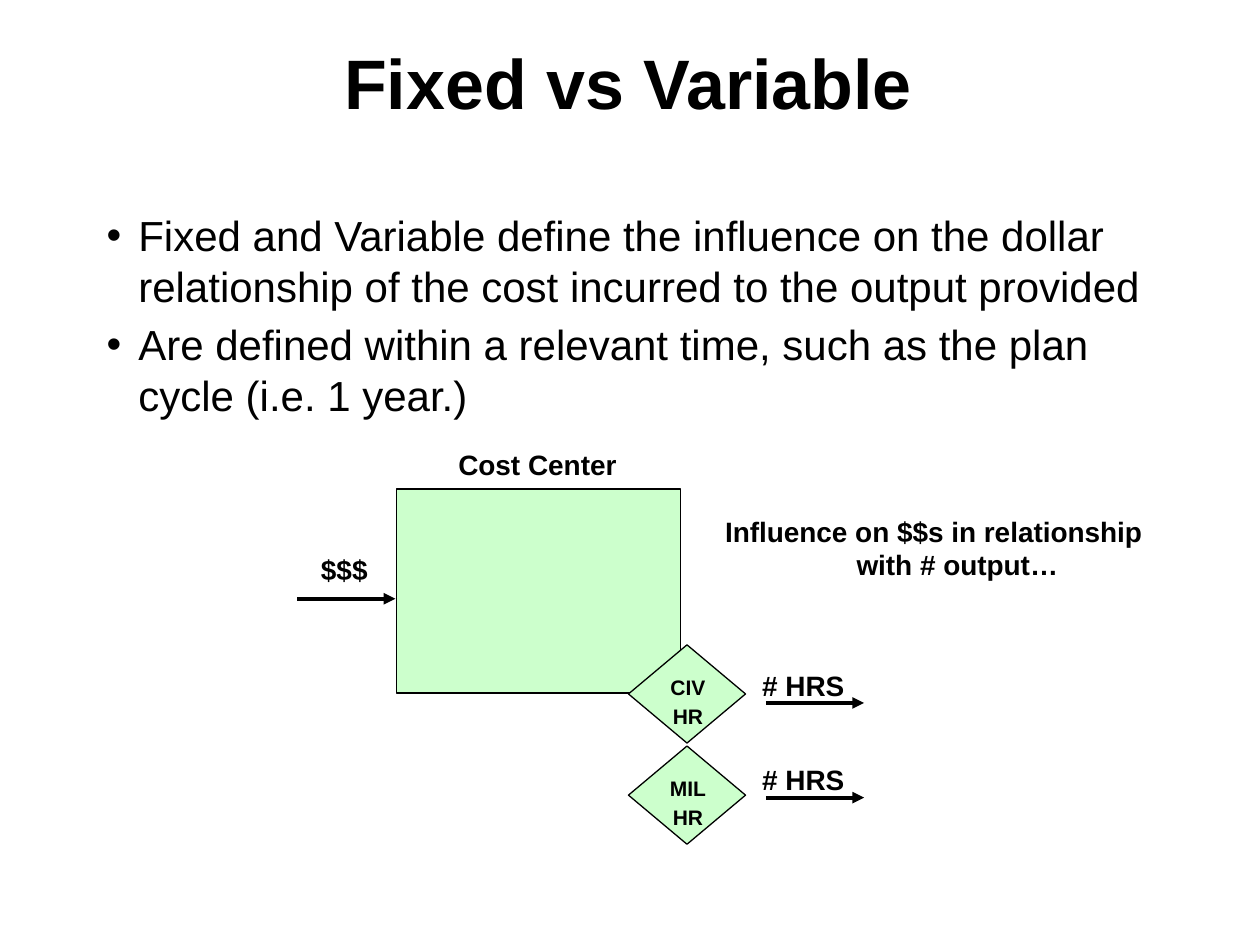
import pptx
import pptx.util
import pptx.dml.color
import pptx.enum.shapes
import pptx.enum.text
import pptx.oxml.ns
import lxml.etree

Cm = pptx.util.Cm
Pt = pptx.util.Pt
ALIGN = pptx.enum.text.PP_ALIGN
SHAPES = pptx.enum.shapes.MSO_SHAPE
COLORS = {"ink": "000000", "fill": "CCFFCC"}
LABEL = {"bold": True, "align": ALIGN.CENTER, "left": 0.95, "hanging": 0.95, "after": 2}


def color(name):
    return pptx.dml.color.RGBColor.from_string(COLORS[name])


def add_xml(parent, tag, **attributes):
    return lxml.etree.SubElement(parent, pptx.oxml.ns.qn(tag), **attributes)


def write_text(shape, text, size=16, bold=False, align=ALIGN.LEFT, left=0, hanging=0,
               bullet=None, before=0, after=0, insets=(0.25, 0.13), wrap=True):
    frame = shape.text_frame
    frame.word_wrap = wrap
    frame.auto_size = pptx.enum.text.MSO_AUTO_SIZE.NONE
    frame.vertical_anchor = pptx.enum.text.MSO_ANCHOR.TOP
    frame.margin_left = frame.margin_right = Cm(insets[0])
    frame.margin_top = Cm(insets[1])
    frame.margin_bottom = 0
    frame.text = text
    for index, paragraph in enumerate(frame.paragraphs):
        properties = paragraph._p.get_or_add_pPr()
        properties.set("marL", str(Cm(left)))
        properties.set("indent", str(-Cm(hanging)))
        if bullet:
            add_xml(properties, "a:buFont", typeface="Arial")
            add_xml(properties, "a:buChar", char=bullet)
        paragraph.alignment = align
        paragraph.space_before = Pt(before if index else 0)
        paragraph.space_after = Pt(after)
        paragraph.font.name = "Arial"
        paragraph.font.size = Pt(size)
        paragraph.font.bold = bold
        paragraph.font.color.rgb = color("ink")


def add_text(slide, box, text, **text_format):
    shape = slide.shapes.add_textbox(*map(Cm, box))
    write_text(shape, text, **text_format)


def add_block(slide, kind, box):
    shape = slide.shapes.add_shape(kind, *map(Cm, box))
    shape.shadow.inherit = False
    shape.fill.solid()
    shape.fill.fore_color.rgb = color("fill")
    shape.line.color.rgb = color("ink")
    shape.line.width = Pt(0.75)


def add_arrow(slide, left, top, length=1.98):
    arrow = slide.shapes.add_connector(
        pptx.enum.shapes.MSO_CONNECTOR.STRAIGHT, Cm(left), Cm(top), Cm(left + length), Cm(top))
    arrow.line.color.rgb = color("ink")
    arrow.line.width = Pt(2.25)
    add_xml(arrow.line._get_or_add_ln(), "a:tailEnd", type="triangle")
    add_xml(arrow._element.spPr, "a:effectLst")


def place_title(slide, box):
    title = slide.shapes.title
    title.left, title.top, title.width, title.height = map(Cm, box)
    write_text(title, "Fixed vs Variable", size=40, bold=True, align=ALIGN.CENTER,
               insets=(0.25, 0.15))


def place_definitions(slide, box):
    add_text(slide, box,
             "Fixed and Variable define the influence on the dollar relationship of the cost "
             "incurred to the output provided\n"
             "Are defined within a relevant time, such as the plan cycle (i.e. 1 year.)",
             size=24, left=0.64, hanging=0.64, bullet="•", before=4.8, insets=(0.25, 0.22))


def place_cost_center(slide, box):
    left, top, width, height = box
    add_block(slide, SHAPES.RECTANGLE, box)
    add_text(slide, (left + 0.18, top - 0.97, 5.31, 0.94), "Cost Center", **LABEL)
    add_text(slide, (left - 2.28, top + 1.14, 2.44, 0.94), "$$$", **LABEL)
    add_arrow(slide, left - 2.01, top + 2.21)
    add_text(slide, (left + width + 0.43, top + 0.38, 9.35, 1.63),
             "Influence on $$s in relationship with # output…", **LABEL)


def place_outputs(slide, box):
    left, top, width, height = box
    diamond_pitch, output_pitch = 2.04, 1.91
    diamond_height = height - diamond_pitch
    for row, labor in enumerate(("CIV", "MIL")):
        diamond_top = top + row * diamond_pitch
        output_top = top + row * output_pitch
        add_block(slide, SHAPES.DIAMOND, (left, diamond_top, width, diamond_height))
        add_text(slide, (left + 0.47, diamond_top + 0.47, 1.46, 1.35), f"{labor}\nHR",
                 size=12, wrap=False, **LABEL)
        add_text(slide, (left + 1.1, output_top + 0.34, 4.85, 0.94), "# HRS", **LABEL)
        add_arrow(slide, left + 2.77, output_top + 1.17)


def main():
    presentation = pptx.Presentation()
    presentation.slide_width = Cm(25.4)
    presentation.slide_height = Cm(19.05)
    slide = presentation.slides.add_slide(presentation.slide_layouts.get_by_name("Title Only"))
    place_title(slide, (3.35, 0.64, 18.62, 2.31))
    place_definitions(slide, (1.9, 4.01, 21.59, 11.43))
    place_cost_center(slide, (8, 9.86, 5.72, 4.11))
    place_outputs(slide, (12.67, 13, 2.36, 4.02))
    presentation.save("out.pptx")


if __name__ == "__main__":
    main()
